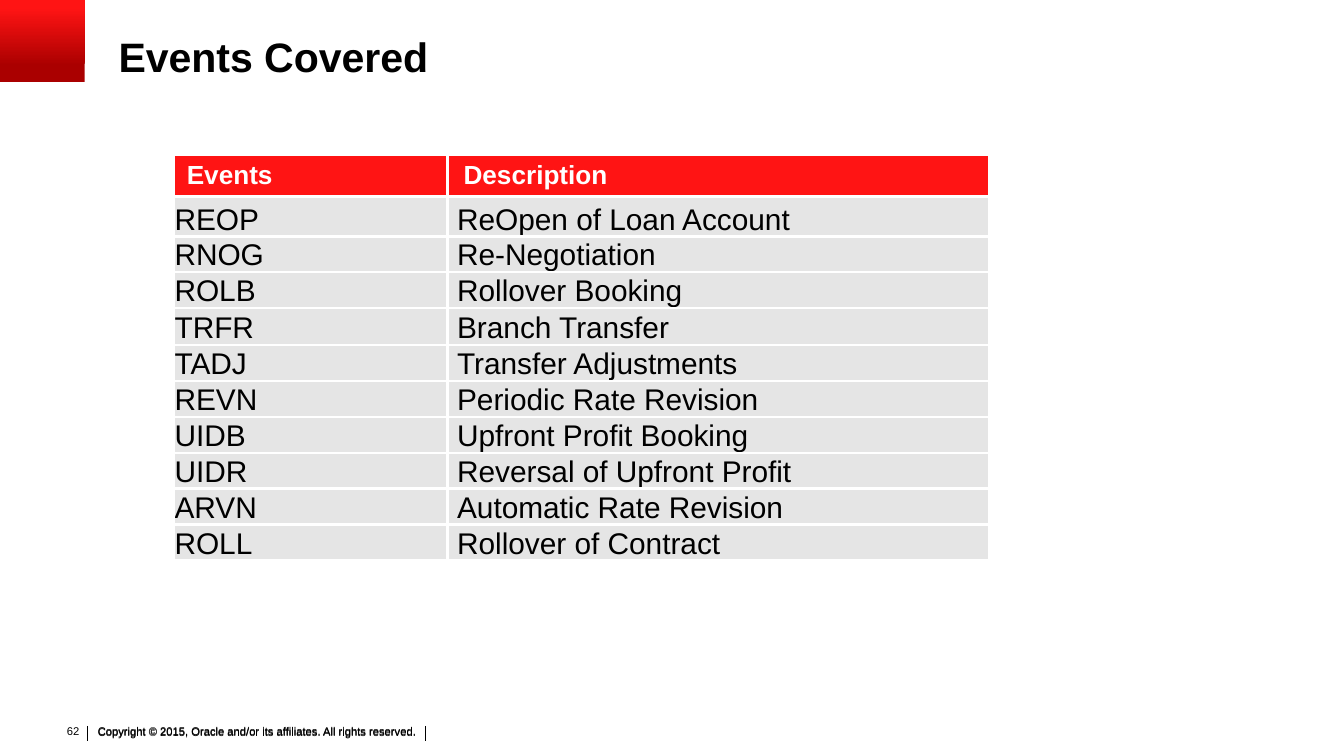
from lxml import etree
from pptx import Presentation
from pptx.dml.color import RGBColor
from pptx.enum import shapes, text
from pptx.oxml import ns
from pptx.util import Cm, Pt

BLACK, WHITE, RED, DARK_RED, GREY = "000000", "FFFFFF", "FF1414", "AA0000", "E5E5E5"
COPYRIGHT = "Copyright © 2015, Oracle and/or its affiliates. All rights reserved."
EVENTS = [
    ("REOP", "ReOpen of Loan Account"),
    ("RNOG", "Re-Negotiation"),
    ("ROLB", "Rollover Booking"),
    ("TRFR", "Branch Transfer"),
    ("TADJ", "Transfer Adjustments"),
    ("REVN", "Periodic Rate Revision"),
    ("UIDB", "Upfront Profit Booking"),
    ("UIDR", "Reversal of Upfront Profit"),
    ("ARVN", "Automatic Rate Revision"),
    ("ROLL", "Rollover of Contract"),
]
HEADER_HEIGHT, ROW_HEIGHT = 0.79, 0.65
TALL_ROWS = {"REOP": 0.75, "TRFR": 0.7}


def colour(value):
    return RGBColor.from_string(value)


def set_margins(target, left, top, right, bottom):
    target.margin_left, target.margin_top = Cm(left), Cm(top)
    target.margin_right, target.margin_bottom = Cm(right), Cm(bottom)


def add_span(para, words, size, ink=BLACK, bold=False):
    span = para.add_run()
    span.text = words
    span.font.name, span.font.size, span.font.bold = "Arial", Pt(size), bold
    span.font.color.rgb = colour(ink)


def add_corner(page, left, top, width, height):
    corner = page.shapes.add_shape(
        shapes.MSO_SHAPE.RECTANGLE, Cm(left), Cm(top), Cm(width), Cm(height))
    corner.shadow.inherit = False
    corner.line.fill.background()
    corner.fill.gradient()
    corner.fill.gradient_angle = 90
    for stop, position, shade in zip(
            corner.fill.gradient_stops, (0.2, 0.9), (DARK_RED, RED)):
        stop.position = position
        stop.color.rgb = colour(shade)


def add_title(page, left, top, width, height):
    title = page.shapes.title
    title.left, title.top = Cm(left), Cm(top)
    title.width, title.height = Cm(width), Cm(height)
    frame = title.text_frame
    frame.auto_size = text.MSO_AUTO_SIZE.NONE
    frame.vertical_anchor = text.MSO_ANCHOR.TOP
    set_margins(frame, 0, 0, 0, 0)
    para = frame.paragraphs[0]
    para.alignment = text.PP_ALIGN.LEFT
    para.line_spacing = 0.9
    add_span(para, "Events Covered", 22, bold=True)


def add_divider(page, x, top, height):
    divider = page.shapes.add_connector(
        shapes.MSO_CONNECTOR.STRAIGHT, Cm(x), Cm(top), Cm(x), Cm(top + height))
    divider.line.color.rgb = colour(BLACK)
    divider.line.width = Pt(0.5)
    etree.SubElement(divider._element.spPr, ns.qn("a:effectLst"))


def add_copyright(page, left, top, width, height):
    box = page.shapes.add_textbox(Cm(left), Cm(top), Cm(width), Cm(height))
    box.text_frame.word_wrap = True
    set_margins(box.text_frame, 0.1, 0.05, 0.1, 0.05)
    add_span(box.text_frame.paragraphs[0], COPYRIGHT, 6)
    for x in (left - 0.1, left + 6.29):
        add_divider(page, x, top + 0.08, 0.25)


def add_page_number(page, left, top, width, height):
    box = page.shapes.add_textbox(Cm(left), Cm(top), Cm(width), Cm(height))
    box.text_frame.word_wrap = False
    para = box.text_frame.paragraphs[0]
    para.alignment = text.PP_ALIGN.RIGHT
    add_span(para, "62", 6)


def add_borders(cell):
    properties = cell._tc.get_or_add_tcPr()
    for index, side in enumerate(("lnL", "lnR", "lnT", "lnB")):
        line = etree.Element(ns.qn(f"a:{side}"), w=str(Pt(1.5)))
        fill = etree.SubElement(line, ns.qn("a:solidFill"))
        etree.SubElement(fill, ns.qn("a:srgbClr"), val=WHITE)
        properties.insert(index, line)


def fill_cell(cell, words, column, is_header):
    cell.fill.solid()
    cell.fill.fore_color.rgb = colour(RED if is_header else GREY)
    add_borders(cell)
    para = cell.text_frame.paragraphs[0]
    if is_header:
        cell.vertical_anchor = text.MSO_ANCHOR.MIDDLE
        set_margins(cell, (0.25, 0.3)[column], 0.1, 0.25, 0.1)
        add_span(para, words, 14, WHITE, bold=True)
    else:
        cell.vertical_anchor = text.MSO_ANCHOR.BOTTOM
        set_margins(cell, (0.02, 0.18)[column], 0, 0.02, 0)
        add_span(para, words, 16)


def add_events(page, left, top, widths):
    heights = [HEADER_HEIGHT] + [TALL_ROWS.get(code, ROW_HEIGHT) for code, _ in EVENTS]
    table = page.shapes.add_table(
        len(heights), len(widths), Cm(left), Cm(top),
        Cm(sum(widths)), Cm(sum(heights))).table
    table.horz_banding = False
    for column, width in zip(table.columns, widths):
        column.width = Cm(width)
    for row, height in zip(table.rows, heights):
        row.height = Cm(height)
    for r, record in enumerate([("Events", "Description")] + EVENTS):
        for c, words in enumerate(record):
            fill_cell(table.cell(r, c), words, c, r == 0)


def main():
    deck = Presentation()
    deck.slide_width, deck.slide_height = Cm(25.4), Cm(14.28)
    page = deck.slides.add_slide(deck.slide_layouts[5])
    for top in (13.66, 13.63):
        add_copyright(page, 1.75, top, 6.96, 0.6)
    add_page_number(page, 0.99, 13.56, 0.76, 0.51)
    add_corner(page, 0, 0, 1.6, 1.55)
    add_title(page, 2.24, 0.69, 22.86, 1.12)
    add_events(page, 3.28, 2.92, (5.18, 10.24))
    deck.save("out.pptx")


if __name__ == "__main__":
    main()
